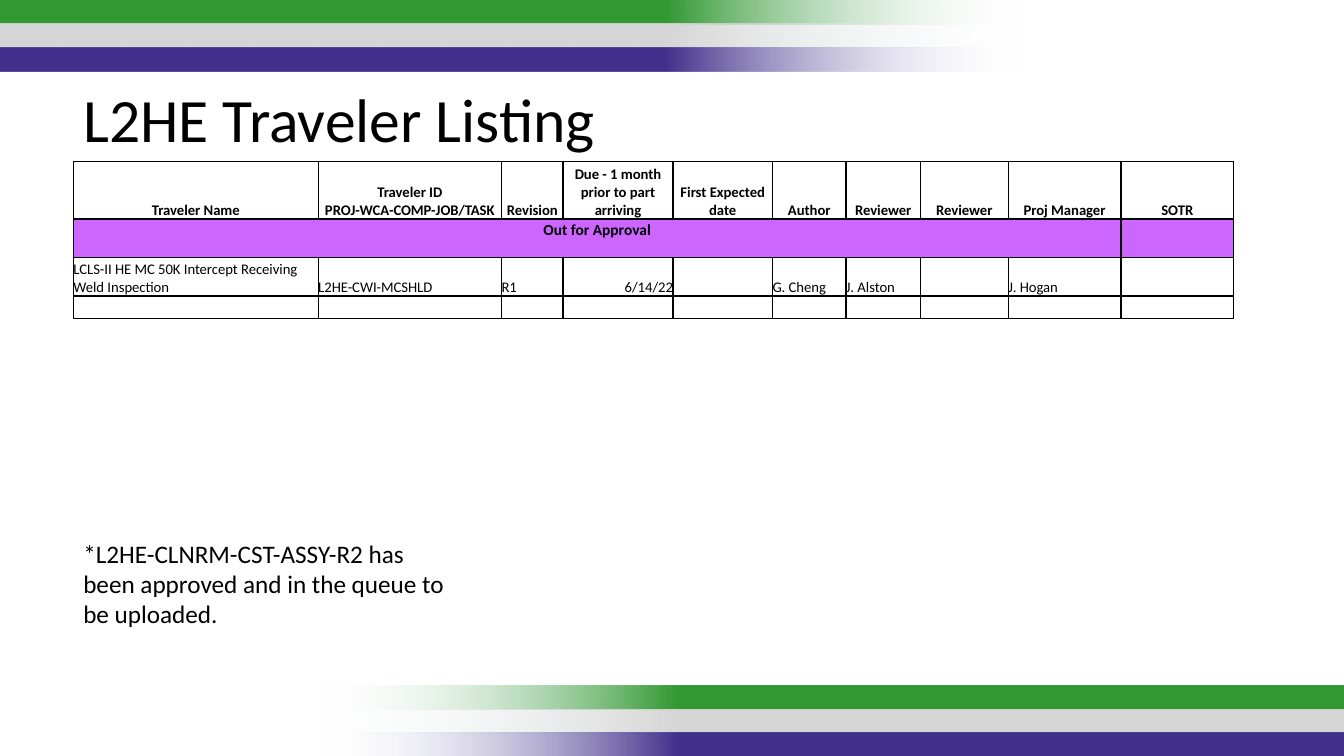
"""Build the traveler listing slide with its status table and striped bands."""
from dataclasses import dataclass

from lxml import etree
from pptx import Presentation
from pptx.dml.color import RGBColor
from pptx.enum.shapes import MSO_SHAPE
from pptx.enum.text import MSO_ANCHOR, PP_ALIGN
from pptx.oxml.ns import qn
from pptx.util import Cm, Pt

RECTANGLE = MSO_SHAPE.RECTANGLE
TOP, BOTTOM = MSO_ANCHOR.TOP, MSO_ANCHOR.BOTTOM
LEFT, CENTER, RIGHT = PP_ALIGN.LEFT, PP_ALIGN.CENTER, PP_ALIGN.RIGHT
TITLE_ONLY_LAYOUT = 5


@dataclass(frozen=True)
class Theme:
    font: str = "Calibri"
    ink: str = "000000"
    fade: str = "F7FAFD"
    approval: str = "CC66FF"
    stripes: tuple[str, ...] = ("339933", "D6D6D6", "42318C")
    title_size: float = 44
    note_size: float = 18
    table_size: float = 10.5
    band_size: float = 11
    border_width: float = 1


@dataclass(frozen=True)
class Band:
    left: float
    top: float
    rotation: int


@dataclass(frozen=True)
class Row:
    height: float
    texts: tuple[str, ...]
    size: float = Theme.table_size
    bold: bool = False
    align: PP_ALIGN = LEFT
    anchor: MSO_ANCHOR = BOTTOM
    inset: float = 0
    fill: str = ""
    span: int = 1


THEME = Theme()
STRIPE_WIDTH, STRIPE_HEIGHT, STRIPE_STEP = 25.83, 0.61, 0.6
BANDS = (Band(-0.03, 0, 180), Band(8.06, 17.27, 0))
CONTENT_LEFT = 1.85
COLUMN_WIDTHS = (6.17, 4.62, 1.55, 2.77, 2.51, 1.85, 1.88, 2.21, 2.84, 2.84)
DATE_COLUMN = 3
ROWS = (
    Row(1.46, ("Traveler Name", "Traveler ID\nPROJ-WCA-COMP-JOB/TASK", "Revision",
               "Due - 1 month prior to part arriving", "First Expected date", "Author",
               "Reviewer", "Reviewer", "Proj Manager", "SOTR"),
        bold=True, align=CENTER, inset=0.03),
    Row(0.97, ("Out for Approval",), size=THEME.band_size, bold=True, align=CENTER,
        anchor=TOP, inset=0.03, fill=THEME.approval, span=9),
    Row(0.97, ("LCLS-II HE MC 50K Intercept Receiving Weld Inspection", "L2HE-CWI-MCSHLD",
               "R1", "6/14/22", "", "G. Cheng", "J. Alston", "", "J. Hogan", "")),
    Row(0.56, ()),
)


def style_runs(paragraph, size: float, bold: bool = False) -> None:
    for run in paragraph.runs:
        run.font.name = THEME.font
        run.font.size = Pt(size)
        run.font.bold = bold
        run.font.color.rgb = RGBColor.from_string(THEME.ink)


def draw_band(slide, band: Band) -> None:
    for index, color in enumerate(THEME.stripes):
        shape = slide.shapes.add_shape(
            RECTANGLE, Cm(band.left), Cm(band.top + index * STRIPE_STEP),
            Cm(STRIPE_WIDTH), Cm(STRIPE_HEIGHT))
        shape.shadow.inherit = False
        shape.line.fill.background()
        shape.rotation = band.rotation
        shape.fill.gradient()
        shape.fill.gradient_angle = 0
        clear, solid = shape.fill.gradient_stops
        clear.color.rgb = RGBColor.from_string(THEME.fade)
        solid.color.rgb = RGBColor.from_string(color)
        solid.position = 0.35
        clear_color = next(shape._element.iter(qn("a:srgbClr")))
        etree.SubElement(clear_color, qn("a:alpha"), val="0")


def add_borders(cell) -> None:
    properties = cell._tc.get_or_add_tcPr()
    for side in ("lnL", "lnR", "lnT", "lnB"):
        line = etree.SubElement(properties, qn(f"a:{side}"), w=str(Pt(THEME.border_width)))
        fill = etree.SubElement(line, qn("a:solidFill"))
        etree.SubElement(fill, qn("a:srgbClr"), val=THEME.ink)


def format_cell(cell, row: Row, text: str, align: PP_ALIGN) -> None:
    add_borders(cell)
    if row.fill:
        cell.fill.solid()
        cell.fill.fore_color.rgb = RGBColor.from_string(row.fill)
    else:
        cell.fill.background()
    cell.margin_left = cell.margin_right = cell.margin_top = Cm(row.inset)
    cell.margin_bottom = 0
    cell.vertical_anchor = row.anchor
    paragraph = cell.text_frame.paragraphs[0]
    paragraph.alignment = align
    if text:
        paragraph.text = text
        style_runs(paragraph, row.size, row.bold)
    else:
        paragraph._p.get_or_add_endParaRPr().set("sz", str(int(row.size * 100)))


def draw_table(slide) -> None:
    table = slide.shapes.add_table(
        len(ROWS), len(COLUMN_WIDTHS), Cm(CONTENT_LEFT), Cm(4.06),
        Cm(sum(COLUMN_WIDTHS)), Cm(sum(row.height for row in ROWS))).table
    table.first_row = table.horz_banding = False
    for column, width in zip(table.columns, COLUMN_WIDTHS):
        column.width = Cm(width)
    for row_index, row in enumerate(ROWS):
        table.rows[row_index].height = Cm(row.height)
        for column_index in range(len(COLUMN_WIDTHS)):
            text = row.texts[column_index] if column_index < len(row.texts) else ""
            is_date = column_index == DATE_COLUMN and row.align == LEFT
            format_cell(table.cell(row_index, column_index), row, text,
                        RIGHT if is_date else row.align)
        if row.span > 1:
            table.cell(row_index, 0).merge(table.cell(row_index, row.span - 1))


def fill_text(shape, text: str, size: float) -> None:
    frame = shape.text_frame
    frame.word_wrap = True
    frame.vertical_anchor = TOP
    frame.text = text
    frame.paragraphs[0].alignment = LEFT
    style_runs(frame.paragraphs[0], size)


def main() -> None:
    presentation = Presentation()
    presentation.slide_width, presentation.slide_height = Cm(33.87), Cm(19.05)
    slide = presentation.slides.add_slide(presentation.slide_layouts[TITLE_ONLY_LAYOUT])
    for band in BANDS:
        draw_band(slide, band)
    draw_table(slide)
    title = slide.shapes.title
    title.left, title.top = Cm(CONTENT_LEFT), Cm(1.9)
    title.width, title.height = Cm(26.19), Cm(2.14)
    fill_text(title, "L2HE Traveler Listing", THEME.title_size)
    note = slide.shapes.add_textbox(Cm(CONTENT_LEFT), Cm(13.44), Cm(9.88), Cm(2.57))
    fill_text(note, "*L2HE-CLNRM-CST-ASSY-R2 has been approved and in the queue to be uploaded.",
              THEME.note_size)
    presentation.save("out.pptx")


if __name__ == "__main__":
    main()
